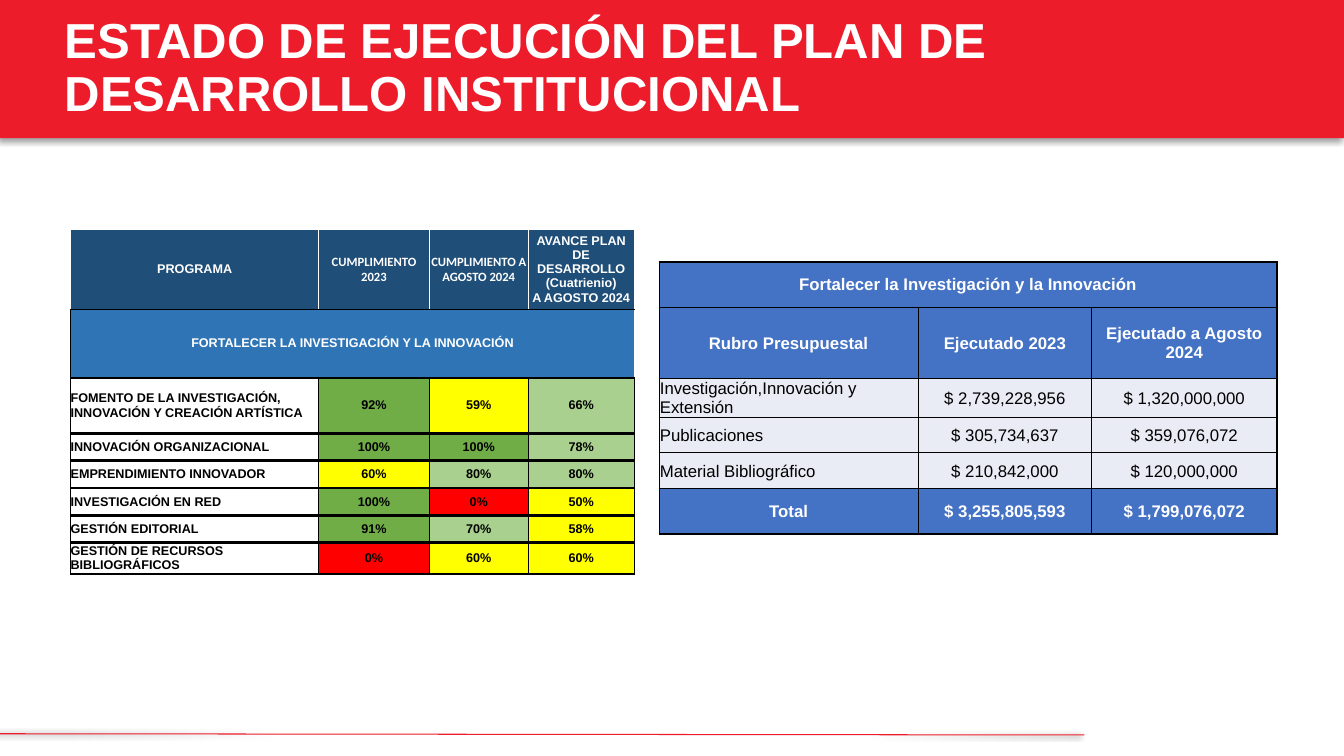
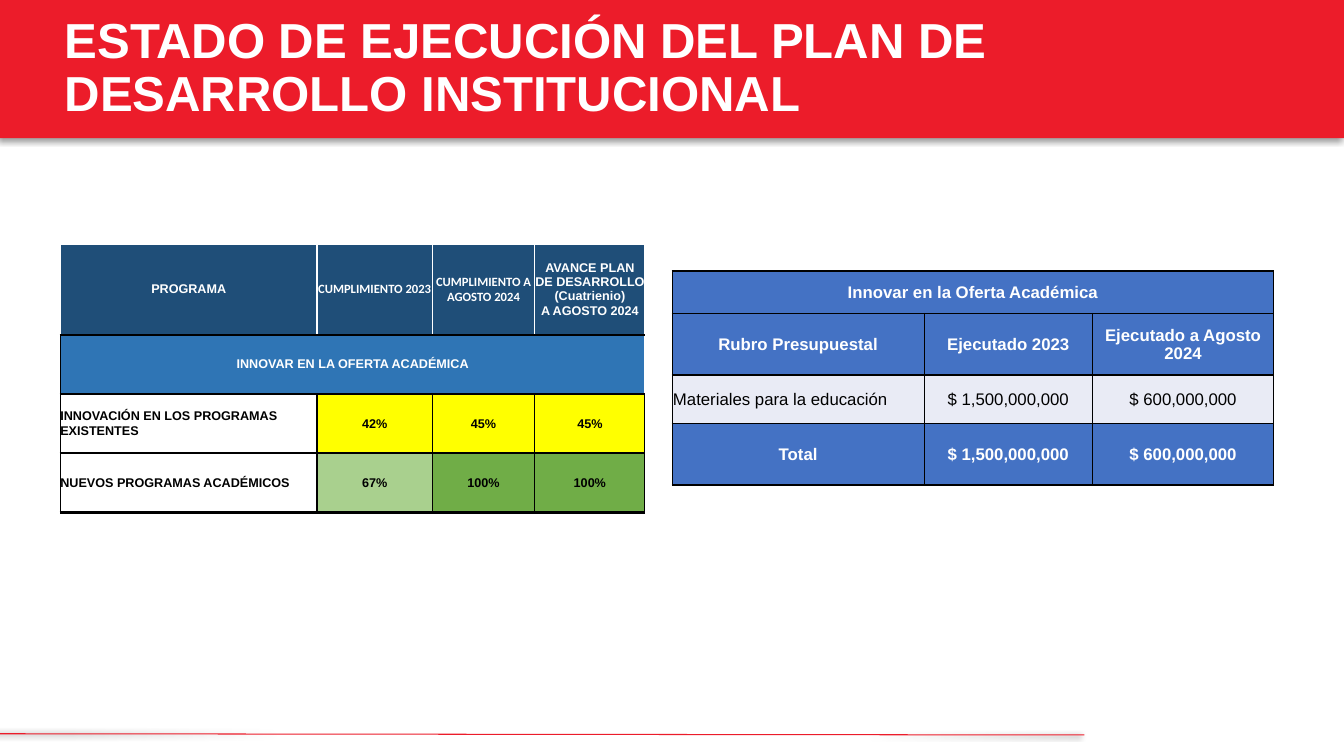
from dataclasses import dataclass

from lxml import etree
from pptx import Presentation
from pptx.dml.color import RGBColor
from pptx.enum.shapes import MSO_CONNECTOR
from pptx.enum.text import MSO_ANCHOR, MSO_AUTO_SIZE, PP_ALIGN
from pptx.oxml.ns import qn
from pptx.util import Cm, Pt

LEFT, CENTER = PP_ALIGN.LEFT, PP_ALIGN.CENTER
MIDDLE = MSO_ANCHOR.MIDDLE
NO_AUTOFIT = MSO_AUTO_SIZE.NONE
STRAIGHT = MSO_CONNECTOR.STRAIGHT
TITLE_ONLY = 5

# Content
TITLE = "ESTADO DE EJECUCIÓN DEL PLAN DE\nDESARROLLO INSTITUCIONAL"
PROGRAM_HEADINGS = [
    "PROGRAMA",
    "CUMPLIMIENTO 2023",
    "CUMPLIMIENTO A AGOSTO 2024",
    "AVANCE PLAN DE DESARROLLO (Cuatrienio)\nA AGOSTO 2024",
]
BUDGET_HEADINGS = ["Rubro Presupuestal", "Ejecutado 2023", "Ejecutado a Agosto 2024"]

# Table places, column widths and row heights are in centimetres
SLIDES = [
    {
        "programs": {
            "goal": "FORTALECER LA INVESTIGACIÓN Y LA INNOVACIÓN",
            "progress": [
                ("FOMENTO DE LA INVESTIGACIÓN, INNOVACIÓN Y CREACIÓN ARTÍSTICA", 92, 59, 66),
                ("INNOVACIÓN ORGANIZACIONAL", 100, 100, 78),
                ("EMPRENDIMIENTO INNOVADOR", 60, 80, 80),
                ("INVESTIGACIÓN EN RED", 100, 0, 50),
                ("GESTIÓN EDITORIAL", 91, 70, 58),
                ("GESTIÓN DE RECURSOS BIBLIOGRÁFICOS", 0, 60, 60),
            ],
            "place": (1.78, 5.79),
            "columns": [6.25, 2.79, 2.49, 2.67],
            "rows": [2, 1.73, 1.4] + [0.69] * 4 + [0.79],
        },
        "budget": {
            "goal": "Fortalecer la Investigación y la Innovación",
            "spending": [
                ("Investigación,Innovación y Extensión", 2739228956, 1320000000),
                ("Publicaciones", 305734637, 359076072),
                ("Material Bibliográfico", 210842000, 120000000),
            ],
            "place": (16.61, 6.6),
            "columns": [6.53, 4.37, 4.67],
            "rows": [1.14, 1.8, 0.98, 0.89, 0.91, 1.14],
        },
    },
    {
        "programs": {
            "goal": "INNOVAR EN LA OFERTA ACADÉMICA",
            "progress": [
                ("INNOVACIÓN EN LOS PROGRAMAS EXISTENTES", 42, 45, 45),
                ("NUEVOS PROGRAMAS ACADÉMICOS", 67, 100, 100),
            ],
            "place": (1.52, 6.15),
            "columns": [6.47, 2.9, 2.59, 2.77],
            "rows": [2.29] + [1.49] * 3,
        },
        "budget": {
            "goal": "Innovar en la Oferta Académica",
            "spending": [("Materiales para la educación", 1500000000, 600000000)],
            "place": (16.94, 6.83),
            "columns": [6.35, 4.24, 4.57],
            "rows": [1.07, 1.55, 1.22, 1.55],
        },
    },
]


@dataclass(frozen=True)
class Theme:
    red: str = "EC1C2A"
    white: str = "FFFFFF"
    black: str = "000000"
    navy: str = "1F4E78"
    blue: str = "2F75B5"
    budget_blue: str = "4472C4"
    budget_pale: str = "E9EBF5"
    high: str = "70AD47"
    good: str = "A9D08E"
    partial: str = "FFFF00"
    none: str = "FF0000"
    font: str = "Arial"
    heading_font: str = "Calibri"
    title_size: float = 35.1
    program_size: float = 9
    budget_size: float = 12


THEME = Theme()
HEADING_BORDERS = {"L": (THEME.white, 1), "R": (THEME.white, 1),
                   "T": (THEME.white, 1), "B": (THEME.black, 1)}
GOAL_BORDERS = {"L": (THEME.black, 1), "T": (THEME.black, 1), "B": (THEME.black, 2)}
PROGRAM_BORDERS = {"L": (THEME.black, 1), "R": (THEME.black, 1),
                   "T": (THEME.black, 2), "B": (THEME.black, 2)}
BUDGET_BORDERS = dict.fromkeys("LRTB", (THEME.black, 1))


# Formatting helpers
def write(frame, text, size, color=THEME.white, font=THEME.font, bold=True,
          align=CENTER, spacing=None):
    for index, line in enumerate(text.split("\n")):
        paragraph = frame.add_paragraph() if index else frame.paragraphs[0]
        paragraph.alignment = align
        if spacing:
            paragraph.line_spacing = spacing
        run = paragraph.add_run()
        run.text = line
        run.font.size = Pt(size)
        run.font.name = font
        run.font.bold = bold
        run.font.color.rgb = RGBColor.from_string(color)


def add_color(parent, color):
    return etree.SubElement(parent, qn("a:srgbClr"), val=color)


def add_shadow(shape, degrees):
    effects = etree.SubElement(shape._element.spPr, qn("a:effectLst"))
    shadow = etree.SubElement(effects, qn("a:outerShdw"), blurRad=str(Pt(4)),
                              dist=str(Pt(3)), dir=str(degrees * 60000), rotWithShape="0")
    etree.SubElement(add_color(shadow, THEME.black), qn("a:alpha"), val="40000")


def style_cell(cell, text, fill, borders, margin=0, **text_format):
    cell.vertical_anchor = MIDDLE
    cell.margin_left = cell.margin_top = cell.margin_right = Cm(margin)
    cell.margin_bottom = 0
    properties = cell._tc.get_or_add_tcPr()
    for side in "LRTB":
        if side in borders:
            color, width = borders[side]
            line = etree.SubElement(properties, qn(f"a:ln{side}"), w=str(Pt(width)))
            add_color(etree.SubElement(line, qn("a:solidFill")), color)
    cell.fill.solid()
    cell.fill.fore_color.rgb = RGBColor.from_string(fill)
    write(cell.text_frame, text, **text_format)


def add_grid(slide, place, columns, rows):
    left, top = place
    grid = slide.shapes.add_table(len(rows), len(columns), Cm(left), Cm(top),
                                  Cm(sum(columns)), Cm(sum(rows))).table
    grid.first_row = grid.horz_banding = False
    for column, width in zip(grid.columns, columns):
        column.width = Cm(width)
    for row, height in zip(grid.rows, rows):
        row.height = Cm(height)
    return grid


def merge_row(grid, row):
    first = grid.cell(row, 0)
    first.merge(grid.cell(row, len(grid.columns) - 1))
    return first


# Slide parts
def add_title_and_footer(slide, slide_width):
    footer_line = slide.shapes.add_connector(STRAIGHT, 0, Cm(18.49), Cm(27.33), Cm(18.52))
    footer_line.line.color.rgb = RGBColor.from_string(THEME.red)
    footer_line.line.width = Pt(0.75)
    add_shadow(footer_line, 180)

    title = slide.shapes.title
    title.left, title.top, title.width, title.height = 0, 0, slide_width, Cm(3.48)
    title.fill.solid()
    title.fill.fore_color.rgb = RGBColor.from_string(THEME.red)
    title.line.fill.background()
    add_shadow(title, 135)
    frame = title.text_frame
    frame.auto_size = NO_AUTOFIT
    frame.word_wrap = True
    frame.vertical_anchor = MIDDLE
    frame.margin_left = Cm(1.63)
    write(frame, TITLE, THEME.title_size, align=LEFT, spacing=0.9)


def progress_color(percent):
    if percent >= 90:
        return THEME.high
    if percent > 60:
        return THEME.good
    return THEME.partial if percent else THEME.none


def add_programs(slide, goal, progress, place, columns, rows):
    grid = add_grid(slide, place, columns, rows)
    size = THEME.program_size
    for column, heading in enumerate(PROGRAM_HEADINGS):
        font = THEME.heading_font if column in (1, 2) else THEME.font
        style_cell(grid.cell(0, column), heading, THEME.navy, HEADING_BORDERS,
                   size=size, font=font)
    style_cell(merge_row(grid, 1), goal, THEME.blue, GOAL_BORDERS, size=size)
    for row, (program, *percents) in enumerate(progress, start=2):
        style_cell(grid.cell(row, 0), program, THEME.white, PROGRAM_BORDERS,
                   size=size, color=THEME.black, align=LEFT)
        for column, percent in enumerate(percents, start=1):
            style_cell(grid.cell(row, column), f"{percent}%", progress_color(percent),
                       PROGRAM_BORDERS, size=size, color=THEME.black)


def add_budget(slide, goal, spending, place, columns, rows):
    grid = add_grid(slide, place, columns, rows)
    cell_format = {"borders": BUDGET_BORDERS, "margin": 0.02, "size": THEME.budget_size}
    style_cell(merge_row(grid, 0), goal, THEME.budget_blue, **cell_format)
    totals = [sum(amounts) for amounts in list(zip(*spending))[1:]]
    lines = [BUDGET_HEADINGS, *spending, ("Total", *totals)]
    for row, line in enumerate(lines, start=1):
        is_item = 1 < row < len(lines)
        for column, value in enumerate(line):
            style_cell(grid.cell(row, column),
                       f"$ {value:,}" if isinstance(value, int) else value,
                       THEME.budget_pale if is_item else THEME.budget_blue,
                       color=THEME.black if is_item else THEME.white,
                       bold=not is_item,
                       align=LEFT if is_item and column == 0 else CENTER,
                       **cell_format)


def main():
    deck = Presentation()
    deck.slide_width, deck.slide_height = Cm(33.87), Cm(19.05)
    for content in SLIDES:
        slide = deck.slides.add_slide(deck.slide_layouts[TITLE_ONLY])
        add_title_and_footer(slide, deck.slide_width)
        add_programs(slide, **content["programs"])
        add_budget(slide, **content["budget"])
    deck.save("out.pptx")


if __name__ == "__main__":
    main()
